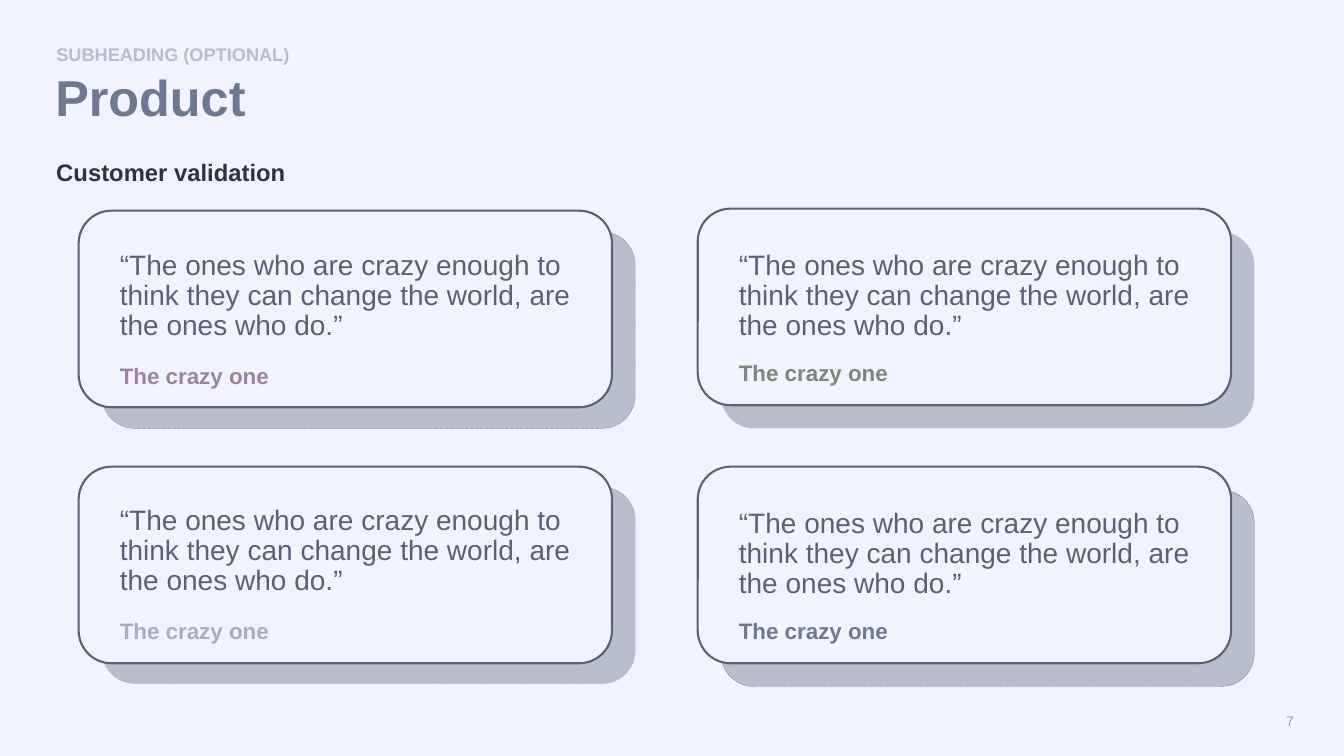
from dataclasses import dataclass

from pptx import Presentation
from pptx import util as u
from pptx.dml import color
from pptx.enum import dml, shapes, text

COLORS = {
    "background": "F1F4FF",
    "shade": "B9BECC",
    "slate": "586179",
    "blue": "6E7893",
    "ink": "2B3447",
    "page": "969EB3",
    "mauve": "9D83A3",
    "sage": "7C877C",
    "gray": "A8AEBE",
    "pale": "E2E4E9",
}
QUOTE = "“The ones who are crazy enough to think they can change the world, are the ones who do.”"
AUTHOR = "The crazy one"
CARD_W, CARD_H = 5.29, 1.95


@dataclass
class Label:
    words: str
    left: float
    top: float
    width: float
    height: float
    size: int
    tone: str
    bold: bool = True
    spacing: float = 0.9


@dataclass
class Testimonial:
    left: float
    shade_top: float
    card_top: float
    quote_top: float
    author_top: float
    author_tone: str
    edge_tone: str


LABELS = [
    Label("Product", 0.45, 0.67, 5.82, 0.88, 36, "blue"),
    Label("Customer validation", 0.46, 1.55, 5.03, 0.66, 17, "ink"),
    Label("SUBHEADING (OPTIONAL)", 0.46, 0.4, 5.81, 0.22, 13, "shade"),
]
TESTIMONIALS = [
    Testimonial(0.78, 2.3, 2.09, 2.44, 3.57, "mauve", "mauve"),
    Testimonial(6.92, 2.3, 2.07, 2.44, 3.54, "sage", "pale"),
    Testimonial(0.78, 4.83, 4.63, 4.97, 6.1, "gray", "gray"),
    Testimonial(6.92, 4.86, 4.63, 5, 6.1, "blue", "blue"),
]


def rgb(tone: str) -> color.RGBColor:
    return color.RGBColor.from_string(COLORS[tone])


def add_label(s, label: Label):
    box = (label.left, label.top, label.width, label.height)
    sp = s.shapes.add_textbox(*map(u.Inches, box))
    tf = sp.text_frame
    tf.word_wrap = True
    p = tf.paragraphs[0]
    p.text = label.words
    p.line_spacing = label.spacing
    p.font.name = "Arial"
    p.font.size = u.Pt(label.size)
    p.font.bold = label.bold
    p.font.color.rgb = rgb(label.tone)
    return sp


def add_card(s, left: float, top: float, fill: str, edge: str, weight: float):
    box = (left, top, CARD_W, CARD_H)
    sp = s.shapes.add_shape(shapes.MSO_SHAPE.ROUNDED_RECTANGLE, *map(u.Inches, box))
    sp.shadow.inherit = False
    sp.fill.solid()
    sp.fill.fore_color.rgb = rgb(fill)
    sp.line.color.rgb = rgb(edge)
    sp.line.width = u.Pt(weight)
    return sp


def add_testimonial(s, t: Testimonial) -> None:
    shade = add_card(s, t.left + 0.23, t.shade_top, "shade", t.edge_tone, 0.25)
    shade.line.dash_style = dml.MSO_LINE.ROUND_DOT
    add_card(s, t.left, t.card_top, "background", "slate", 1.5)
    left = t.left + 0.31
    add_label(s, Label(QUOTE, left, t.quote_top, 4.98, 1.18, 20, "slate", False))
    add_label(s, Label(AUTHOR, left, t.author_top, 3.94, 0.41, 16, t.author_tone))


def main() -> None:
    prs = Presentation()
    prs.slide_width, prs.slide_height = u.Inches(13.33), u.Inches(7.5)
    s = prs.slides.add_slide(prs.slide_layouts[6])
    s.background.fill.solid()
    s.background.fill.fore_color.rgb = rgb("background")
    for label in LABELS:
        add_label(s, label)
    for testimonial in TESTIMONIALS:
        add_testimonial(s, testimonial)
    page = Label("7", 9.93, 6.95, 3, 0.4, 10, "page", False, 1.0)
    tf = add_label(s, page).text_frame
    tf.vertical_anchor = text.MSO_ANCHOR.MIDDLE
    tf.paragraphs[0].alignment = text.PP_ALIGN.RIGHT
    prs.save("out.pptx")


if __name__ == "__main__":
    main()
